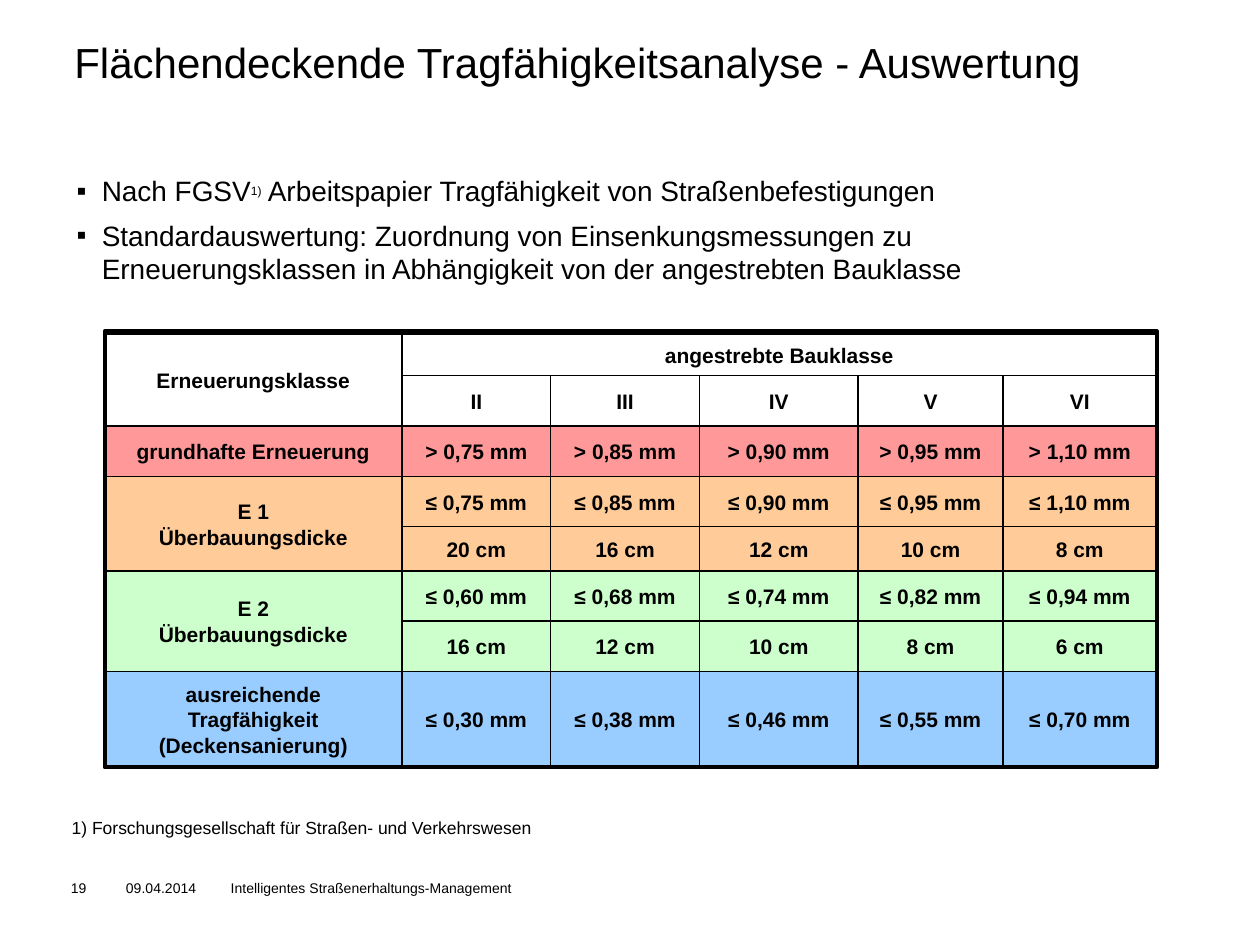
from lxml import etree
from pptx import Presentation
from pptx.dml.color import RGBColor
from pptx.enum.shapes import MSO_SHAPE
from pptx.enum.text import MSO_ANCHOR, PP_ALIGN
from pptx.oxml.ns import qn
from pptx.util import Pt

LEFT, CENTER = PP_ALIGN.LEFT, PP_ALIGN.CENTER
TOP, MIDDLE = MSO_ANCHOR.TOP, MSO_ANCHOR.MIDDLE
RECTANGLE = MSO_SHAPE.RECTANGLE

COLORS = {
    "black": "000000",
    "red": "FF9999",
    "orange": "FFCC99",
    "green": "CCFFCC",
    "blue": "99CCFF",
}
FONT = "Arial"
TABLE_LEFT, TABLE_WIDTH = 59.8, 601.2
COLUMN_WIDTHS = [169.9, 85, 85, 90.7, 82.8, 87.8]
ROW_HEIGHTS = [23.8, 28.8, 28.8, 28.8, 25.2, 28.8, 28.8, 50.4]


def color(name):
    return RGBColor.from_string(COLORS[name])


def format_run(run, size, bold=False):
    run.font.name = FONT
    run.font.size = Pt(size)
    run.font.bold = bold
    run.font.color.rgb = color("black")


def write_text(frame, text, size, bold=False, align=LEFT, anchor=TOP, spacing=None):
    """Fill a text frame; a newline starts a paragraph, a vertical tab breaks a line."""
    frame.text = text
    frame.word_wrap = True
    frame.vertical_anchor = anchor
    for paragraph in frame.paragraphs:
        paragraph.alignment = align
        if spacing:
            paragraph.line_spacing = spacing
        for run in paragraph.runs:
            format_run(run, size, bold)


def set_insets(frame, left=0, top=0, right=0, bottom=0):
    frame.margin_left, frame.margin_top = Pt(left), Pt(top)
    frame.margin_right, frame.margin_bottom = Pt(right), Pt(bottom)


def add_bullet(paragraph, character, indent):
    properties = paragraph._p.get_or_add_pPr()
    properties.set("marL", str(Pt(indent)))
    properties.set("indent", str(-Pt(indent)))
    bullet_color = etree.SubElement(properties, qn("a:buClr"))
    etree.SubElement(bullet_color, qn("a:srgbClr"), val=COLORS["black"])
    etree.SubElement(properties, qn("a:buFont"), typeface=FONT)
    etree.SubElement(properties, qn("a:buChar"), char=character)


def set_borders(cell, width):
    """Draw all four borders; they must come before the fill in the cell."""
    properties = cell._tc.get_or_add_tcPr()
    for index, side in enumerate(("lnL", "lnR", "lnT", "lnB")):
        line = etree.Element(qn(f"a:{side}"), w=str(Pt(width)))
        fill = etree.SubElement(line, qn("a:solidFill"))
        etree.SubElement(fill, qn("a:srgbClr"), val=COLORS["black"])
        properties.insert(index, line)


def millimetres(sign, values):
    return [f"{sign} {value} mm" for value in values.split()]


def centimetres(values):
    return [f"{value} cm" for value in values.split()]


class SlideBuilder:
    def __init__(self, presentation):
        self.slide = presentation.slides.add_slide(presentation.slide_layouts[5])

    def title(self, text, left, top, width, height):
        title = self.slide.shapes.title
        title.left, title.top = Pt(left), Pt(top)
        title.width, title.height = Pt(width), Pt(height)
        set_insets(title.text_frame)
        write_text(title.text_frame, text, 24, anchor=MIDDLE)

    def text(self, text, left, top, width, height, size, align=LEFT, top_inset=0):
        box = self.slide.shapes.add_textbox(Pt(left), Pt(top), Pt(width), Pt(height))
        set_insets(box.text_frame, top=top_inset)
        write_text(box.text_frame, text, size, align=align)
        return box.text_frame

    def bullets(self, text, left, top, width, height, size):
        frame = self.text(text, left, top, width, height, size)
        set_insets(frame, 7.2, 5.8, 7.2, 3.6)
        for paragraph in frame.paragraphs:
            add_bullet(paragraph, "▪", 14.4)
            paragraph.space_after = Pt(6)
        return frame

    def frame(self, left, top, width, height, line_width):
        shape = self.slide.shapes.add_shape(
            RECTANGLE, Pt(left), Pt(top), Pt(width), Pt(height))
        shape.shadow.inherit = False
        shape.fill.background()
        shape.line.color.rgb = color("black")
        shape.line.width = Pt(line_width)

    def table(self, rows, fills, merges, left, top):
        table = self.slide.shapes.add_table(
            len(rows), len(COLUMN_WIDTHS), Pt(left), Pt(top),
            Pt(sum(COLUMN_WIDTHS)), Pt(sum(ROW_HEIGHTS))).table
        table.first_row = table.horz_banding = False
        for column, width in zip(table.columns, COLUMN_WIDTHS):
            column.width = Pt(width)
        for row, height in zip(table.rows, ROW_HEIGHTS):
            row.height = Pt(height)
        for row, texts, fill in zip(table.rows, rows, fills):
            for cell, text in zip(row.cells, texts):
                write_text(cell.text_frame, text, 12, bold=True, align=CENTER, spacing=1.1)
                cell.vertical_anchor = MIDDLE
                if fill:
                    cell.fill.solid()
                    cell.fill.fore_color.rgb = color(fill)
                else:
                    cell.fill.background()
                set_borders(cell, 1)
        for first, last in merges:
            table.cell(*first).merge(table.cell(*last))


def main():
    presentation = Presentation()
    presentation.slide_width, presentation.slide_height = Pt(720), Pt(540)
    builder = SlideBuilder(presentation)

    builder.title("Flächendeckende Tragfähigkeitsanalyse - Auswertung", 42.5, 0, 633.6, 70.6)

    body = builder.bullets(
        "Nach FGSV\n"
        "Standardauswertung: Zuordnung von Einsenkungsmessungen zu "
        "Erneuerungsklassen in Abhängigkeit von der angestrebten Bauklasse",
        36.7, 93.6, 635, 97.2, 16)
    for text, size, baseline in (
            ("1)", 12, 30000),
            (" Arbeitspapier Tragfähigkeit von Straßenbefestigungen", 16, 0)):
        run = body.paragraphs[0].add_run()
        run.text = text
        format_run(run, size)
        run.font._element.set("baseline", str(baseline))

    rows = [
        ["Erneuerungsklasse", "angestrebte Bauklasse", "", "", "", ""],
        ["", "II", "III", "IV", "V", "VI"],
        ["grundhafte Erneuerung", *millimetres(">", "0,75 0,85 0,90 0,95 1,10")],
        ["E 1\vÜberbauungsdicke", *millimetres("≤", "0,75 0,85 0,90 0,95 1,10")],
        ["", *centimetres("20 16 12 10 8")],
        ["E 2\vÜberbauungsdicke", *millimetres("≤", "0,60 0,68 0,74 0,82 0,94")],
        ["", *centimetres("16 12 10 8 6")],
        ["ausreichende\vTragfähigkeit\n(Deckensanierung)",
         *millimetres("≤", "0,30 0,38 0,46 0,55 0,70")],
    ]
    fills = [None, None, "red", "orange", "orange", "green", "green", "blue"]
    merges = [((0, 0), (1, 0)), ((0, 1), (0, 5)), ((3, 0), (4, 0)), ((5, 0), (6, 0))]
    builder.table(rows, fills, merges, TABLE_LEFT, 190.8)
    builder.frame(TABLE_LEFT, 189.4, TABLE_WIDTH, 249.1, 2.25)

    builder.text("1) Forschungsgesellschaft für Straßen- und Verkehrswesen",
                 41, 466.6, 442, 22.3, 10)
    for text, left, width, height, align in (
            ("19", 18, 54, 25.2, CENTER),
            ("09.04.2014", 72, 59.8, 28, LEFT),
            ("Intelligentes Straßenerhaltungs-Management", 131.8, 282.2, 40.3, LEFT)):
        builder.text(text, left, 499.7, width, height, 8, align=align, top_inset=2.9)

    presentation.save("out.pptx")


if __name__ == "__main__":
    main()
